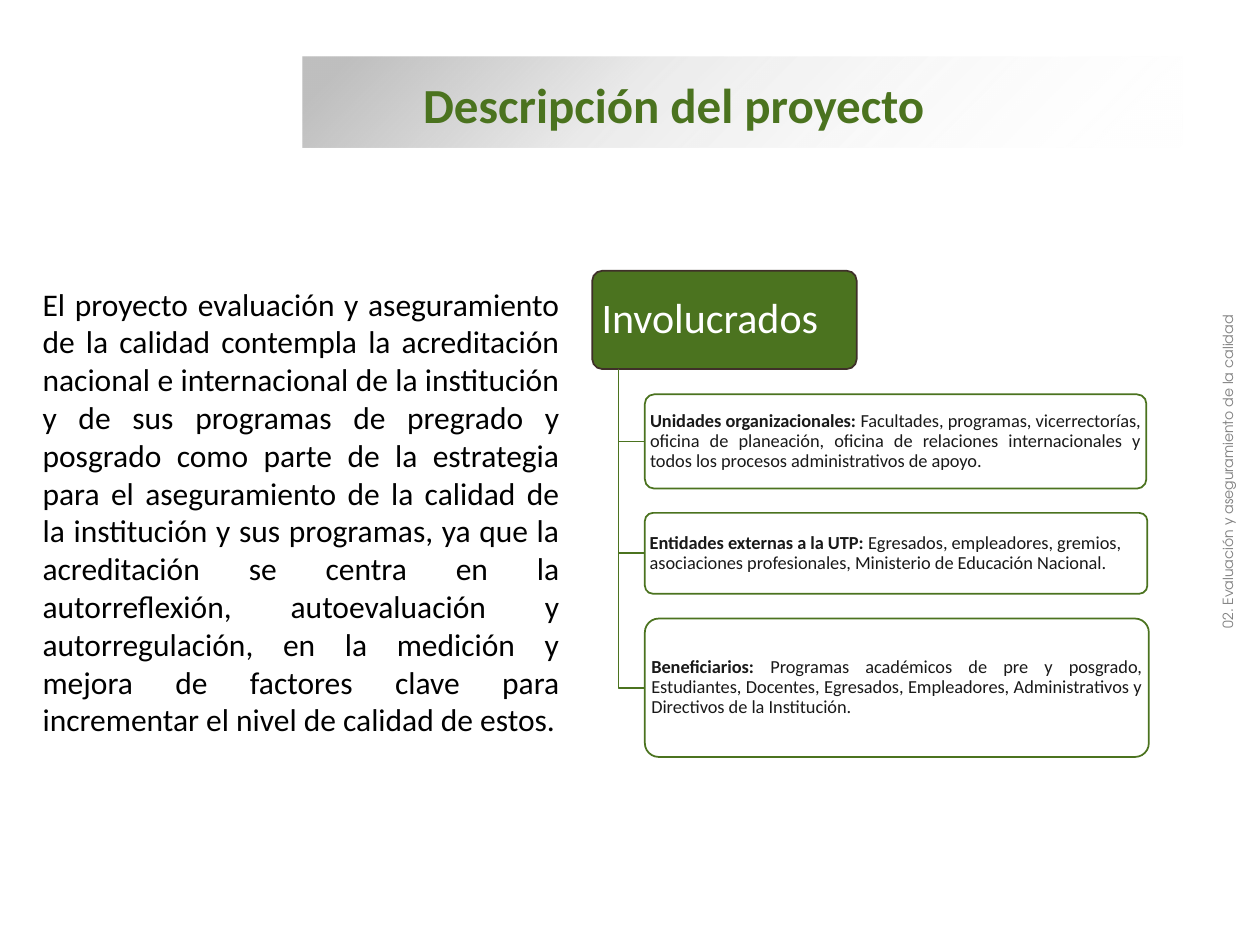
"""Build the project description slide with its stakeholder tree."""
from dataclasses import dataclass

from lxml import etree
from pptx import Presentation
from pptx.dml.color import RGBColor
from pptx.enum import shapes, text
from pptx.oxml import ns
from pptx.util import Cm, Pt

COLORS = {"green": "4B731F", "brown": "3F3029", "white": "FFFFFF", "gray": "BFBFBF",
          "ink": "191919", "black": "000000", "side": "808080"}
LEFT, JUSTIFY, CENTER = text.PP_ALIGN.LEFT, text.PP_ALIGN.JUSTIFY, text.PP_ALIGN.CENTER
TOP, MIDDLE = text.MSO_ANCHOR.TOP, text.MSO_ANCHOR.MIDDLE
TRUNK_X, BRANCH_X = 12.47, 13.0


@dataclass
class Box:
    left: float
    top: float
    width: float
    height: float

    def lengths(self) -> list:
        return [Cm(v) for v in (self.left, self.top, self.width, self.height)]


@dataclass
class Branch:
    box: Box
    label: str
    body: str
    align: text.PP_ALIGN


HEAD = Box(11.94, 5.46, 5.33, 1.98)
BRANCHES = [
    Branch(Box(BRANCH_X, 7.95, 10.11, 1.9), "Unidades organizacionales: ",
           "Facultades, programas, vicerrectorías, oficina de planeación, oficina de relaciones "
           "internacionales y todos los procesos administrativos de apoyo.", JUSTIFY),
    Branch(Box(BRANCH_X, 10.34, 10.13, 1.63), "Entidades externas a la UTP: ",
           "Egresados, empleadores, gremios, asociaciones profesionales, "
           "Ministerio de Educación Nacional.", LEFT),
    Branch(Box(BRANCH_X, 12.47, 10.16, 2.79), "Beneficiarios: ",
           "Programas académicos de pre y posgrado, Estudiantes, Docentes, Egresados, "
           "Empleadores, Administrativos y Directivos de la Institución.", JUSTIFY),
]
SUMMARY = (
    "El proyecto evaluación y aseguramiento de la calidad contempla la acreditación nacional e "
    "internacional de la institución y de sus programas de pregrado y posgrado como parte de la "
    "estrategia para el aseguramiento de la calidad de la institución y sus programas, ya que la "
    "acreditación se centra en la autorreflexión, autoevaluación y autorregulación, en la "
    "medición y mejora de factores clave para incrementar el nivel de calidad de estos.")


def rgb(name: str) -> RGBColor:
    return RGBColor.from_string(COLORS[name])


def write(sp, runs: list, size: float, color: str, align=LEFT, anchor=TOP,
          inset=(0.25, 0.13), spacing=1.0, font="Calibri") -> None:
    tf = sp.text_frame
    across, down = (Cm(v) for v in inset)
    frame = {"word_wrap": True, "auto_size": text.MSO_AUTO_SIZE.NONE, "vertical_anchor": anchor,
             "margin_left": across, "margin_right": across,
             "margin_top": down, "margin_bottom": down}
    for key, value in frame.items():
        setattr(tf, key, value)
    p = tf.paragraphs[0]
    p.alignment, p.line_spacing = align, spacing
    for words, bold in runs:
        r = p.add_run()
        r.text = words
        for key, value in {"name": font, "size": Pt(size), "bold": bold}.items():
            setattr(r.font, key, value)
        r.font.color.rgb = rgb(color)


def add_box(s, box: Box, fill: str, line: str):
    sp = s.shapes.add_shape(shapes.MSO_SHAPE.ROUNDED_RECTANGLE, *box.lengths())
    sp.adjustments[0] = 0.1
    sp.shadow.inherit = False
    sp.fill.solid()
    sp.fill.fore_color.rgb = rgb(fill)
    sp.line.color.rgb, sp.line.width = rgb(line), Pt(1)
    return sp


def add_elbow(s, start_y: float, end_y: float) -> None:
    builder = s.shapes.build_freeform(Cm(TRUNK_X), Cm(start_y))
    builder.add_line_segments([(Cm(TRUNK_X), Cm(end_y)), (Cm(BRANCH_X), Cm(end_y))], close=False)
    sp = builder.convert_to_shape()
    sp.shadow.inherit = False
    sp.fill.background()
    sp.line.color.rgb, sp.line.width = rgb("green"), Pt(1)


def add_branch(s, branch: Branch) -> None:
    box = branch.box
    add_elbow(s, HEAD.top + HEAD.height, box.top + box.height / 2)
    sp = add_box(s, box, "white", "green")
    fill = sp._element.spPr.find(ns.qn("a:solidFill"))
    etree.SubElement(fill[0], ns.qn("a:alpha"), val="90000")
    write(sp, [(branch.label, True), (branch.body, False)], 10.5, "ink", branch.align,
          MIDDLE, (0.05, 0.05), 0.9)


def add_banner(s) -> None:
    sp = s.shapes.add_shape(shapes.MSO_SHAPE.RECTANGLE, *Box(6.1, 1.14, 17.73, 1.83).lengths())
    sp.shadow.inherit = False
    sp.line.fill.background()
    sp.fill.gradient()
    sp.fill.gradient_angle = 315
    stops = sp._element.spPr.find(ns.qn("a:gradFill")).find(ns.qn("a:gsLst"))
    for stop in list(stops):
        stops.remove(stop)
    for pos, color, alpha in ((5, "gray", 100), (37, "gray", 31), (100, "white", 0)):
        stop = etree.SubElement(stops, ns.qn("a:gs"), pos=str(pos * 1000))
        tint = etree.SubElement(stop, ns.qn("a:srgbClr"), val=COLORS[color])
        etree.SubElement(tint, ns.qn("a:alpha"), val=str(alpha * 1000))


def add_title(s, words: str) -> None:
    sp = s.shapes.title
    sp.left, sp.top, sp.width, sp.height = Box(8.28, 1.37, 15.75, 1.45).lengths()
    write(sp, [(words, True)], 28, "green", anchor=MIDDLE)
    s.shapes._spTree.append(sp._element)


def main() -> None:
    prs = Presentation()
    prs.slide_width, prs.slide_height = Cm(25.4), Cm(19.05)
    s = prs.slides.add_slide(prs.slide_layouts[5])
    summary = s.shapes.add_textbox(*Box(0.61, 5.61, 10.92, 10.26).lengths())
    write(summary, [(SUMMARY, False)], 18, "black", JUSTIFY)
    head = add_box(s, HEAD, "green", "brown")
    write(head, [("Involucrados", False)], 24, "white", LEFT, MIDDLE, (0.13, 0.08), 0.9)
    for branch in BRANCHES:
        add_branch(s, branch)
    add_banner(s)
    add_title(s, "Descripción del proyecto")
    side = s.shapes.add_textbox(*Box(18.77, 9.04, 12.29, 0.94).lengths())
    side.rotation = 270
    write(side, [("02. Evaluación y aseguramiento de la calidad", False)], 8, "side", CENTER,
          font="TeX Gyre Adventor")
    prs.save("out.pptx")


if __name__ == "__main__":
    main()
